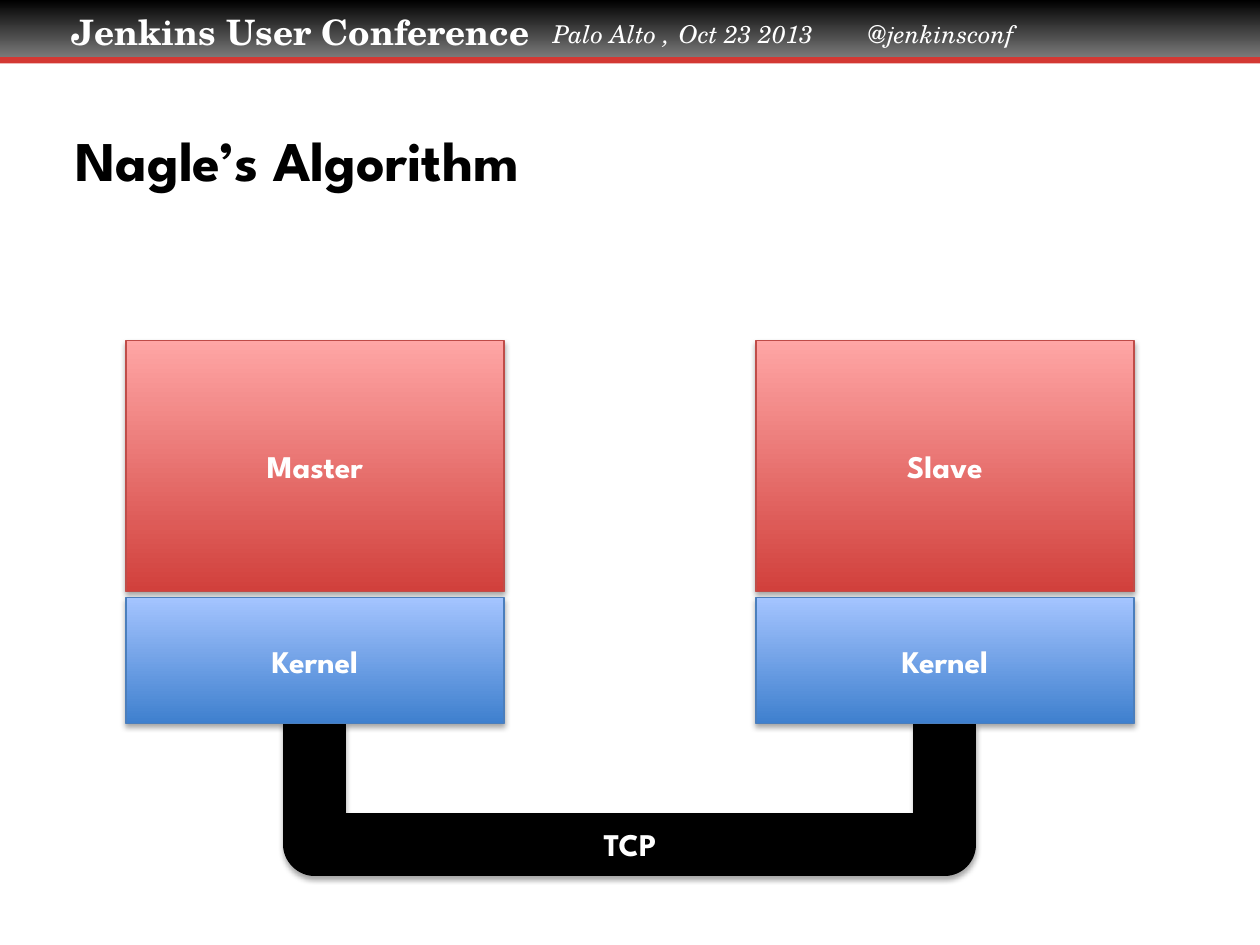
from dataclasses import dataclass

from lxml import etree
from pptx import Presentation
from pptx.dml.color import RGBColor
from pptx.enum.shapes import MSO_CONNECTOR, MSO_SHAPE
from pptx.enum.text import MSO_ANCHOR, MSO_AUTO_SIZE, PP_ALIGN
from pptx.oxml import parse_xml
from pptx.oxml.ns import nsdecls, qn
from pptx.util import Pt

RECTANGLE = MSO_SHAPE.RECTANGLE
ELBOW = MSO_CONNECTOR.ELBOW
LEFT, CENTER = PP_ALIGN.LEFT, PP_ALIGN.CENTER
TOP, MIDDLE = MSO_ANCHOR.TOP, MSO_ANCHOR.MIDDLE
NO_AUTOSIZE = MSO_AUTO_SIZE.NONE
TITLE_ONLY = 5
UPWARD, DOWNWARD = 90, 270


@dataclass(frozen=True)
class Theme:
    heading_font: str = "League Spartan"
    banner_font: str = "TeX Gyre Schola"
    title_size: float = 32
    banner_size: float = 20
    label_size: float = 18
    detail_size: float = 14
    white: str = "FFFFFF"
    black: str = "000000"
    stripe: str = "D33833"
    banner: tuple = ("000000", "808080")
    process: tuple = ("D1403C", "FFA6A5")
    process_edge: str = "BF4C48"
    kernel: tuple = ("3F80CE", "A4C4FF")
    kernel_edge: str = "4B7EBC"


class SlideBuilder:
    def __init__(self, page, theme):
        self.page = page
        self.theme = theme

    def set_text(self, shape, text, font, size, color, align=LEFT, anchor=MIDDLE,
                 bold=True, italic=False):
        frame = shape.text_frame
        frame.text = text
        frame.word_wrap = True
        frame.auto_size = NO_AUTOSIZE
        frame.vertical_anchor = anchor
        para = frame.paragraphs[0]
        para.alignment = align
        for span in para.runs:
            span.font.name = font
            span.font.size = Pt(size)
            span.font.bold = bold
            span.font.italic = italic
            span.font.color.rgb = RGBColor.from_string(color)

    def add_shadow(self, shape):
        shape._element.spPr.append(parse_xml(
            f'<a:effectLst {nsdecls("a")}>'
            '<a:outerShdw blurRad="40000" dist="23000" dir="5400000" rotWithShape="0">'
            '<a:srgbClr val="000000"><a:alpha val="35000"/></a:srgbClr>'
            '</a:outerShdw></a:effectLst>'))

    def title(self, text, left, top, width, height):
        box = self.page.shapes.title
        box.left, box.top, box.width, box.height = map(Pt, (left, top, width, height))
        self.set_text(box, text, self.theme.heading_font, self.theme.title_size,
                      self.theme.black)

    def band(self, left, top, width, height, colors, angle=UPWARD):
        box = self.page.shapes.add_shape(RECTANGLE, *map(Pt, (left, top, width, height)))
        if len(colors) == 1:
            box.fill.solid()
            box.fill.fore_color.rgb = RGBColor.from_string(colors[0])
        else:
            box.fill.gradient()
            box.fill.gradient_angle = angle
            for stop, color in zip(box.fill.gradient_stops, colors):
                stop.color.rgb = RGBColor.from_string(color)
        box.line.fill.background()
        box.shadow.inherit = False
        return box

    def block(self, text, left, top, width, height, colors, edge):
        box = self.band(left, top, width, height, colors)
        box.line.color.rgb = RGBColor.from_string(edge)
        box.line.width = Pt(0.75)
        box._element.spPr.remove(box._element.spPr.find(qn("a:effectLst")))
        self.add_shadow(box)
        self.set_text(box, text, self.theme.heading_font, self.theme.label_size,
                      self.theme.white, CENTER)

    def label(self, text, left, top, width, height):
        box = self.page.shapes.add_textbox(*map(Pt, (left, top, width, height)))
        self.set_text(box, text, self.theme.heading_font, self.theme.label_size,
                      self.theme.white, CENTER, TOP)

    def banner(self, text, left, top, width, height):
        box = self.band(left, top, width, height, self.theme.banner, DOWNWARD)
        frame = box.text_frame
        frame.margin_left, frame.margin_top = Pt(41), Pt(6)
        self.set_text(box, text, self.theme.banner_font, self.theme.banner_size,
                      self.theme.white, anchor=TOP)

    def details(self, text, left, top, width, height, stops):
        box = self.page.shapes.add_textbox(*map(Pt, (left, top, width, height)))
        box.text_frame.margin_left = 0
        properties = box.text_frame.paragraphs[0]._p.get_or_add_pPr()
        tabs = etree.SubElement(properties, qn("a:tabLst"))
        for stop in stops:
            etree.SubElement(tabs, qn("a:tab"), pos=str(int(Pt(stop))), algn="l")
        self.set_text(box, text, self.theme.banner_font, self.theme.detail_size,
                      self.theme.white, anchor=TOP, bold=False, italic=True)

    def pipe(self, left, right, top, depth, weight):
        center, half, offset = (left + right) / 2, (right - left) / 2, 0.36
        pipe = self.page.shapes.add_connector(
            ELBOW, Pt(center + offset), Pt(top - half),
            Pt(center - offset), Pt(top + half))
        properties = pipe._element.spPr
        properties.find(qn("a:xfrm")).set("rot", "16200000")
        geometry = properties.find(qn("a:prstGeom"))
        guides = geometry.find(qn("a:avLst"))
        if guides is None:
            guides = etree.SubElement(geometry, qn("a:avLst"))
        bend = round(depth / (2 * offset) * 100000)
        etree.SubElement(guides, qn("a:gd"), name="adj1", fmla=f"val {bend}")
        pipe.line.color.rgb = RGBColor.from_string(self.theme.black)
        pipe.line.width = Pt(weight)
        etree.SubElement(properties.find(qn("a:ln")), qn("a:round"))
        self.add_shadow(pipe)


def main():
    theme = Theme()
    deck = Presentation()
    deck.slide_width, deck.slide_height = Pt(720), Pt(540)
    page = deck.slides.add_slide(deck.slide_layouts[TITLE_ONLY])
    builder = SlideBuilder(page, theme)

    builder.banner("Jenkins User Conference", 0, 0, 720, 34.5)
    builder.band(0, 32.7, 720, 3.6, (theme.stripe,))
    builder.details("Palo Alto ,\tOct 23 2013\t@jenkinsconf",
                    316, 7.2, 352, 24.5, (78.2, 236.6))
    builder.title("Nagle’s Algorithm", 36, 46, 648, 90)

    builder.pipe(180, 540, 413.3, 70.5, 36)
    for name, left in (("Master", 72), ("Slave", 432)):
        builder.block(name, left, 194.4, 216, 143.5, theme.process, theme.process_edge)
        builder.block("Kernel", left, 341.5, 216, 71.8, theme.kernel, theme.kernel_edge)
    builder.label("TCP", 288, 468, 144, 29)

    deck.save("out.pptx")


if __name__ == "__main__":
    main()
